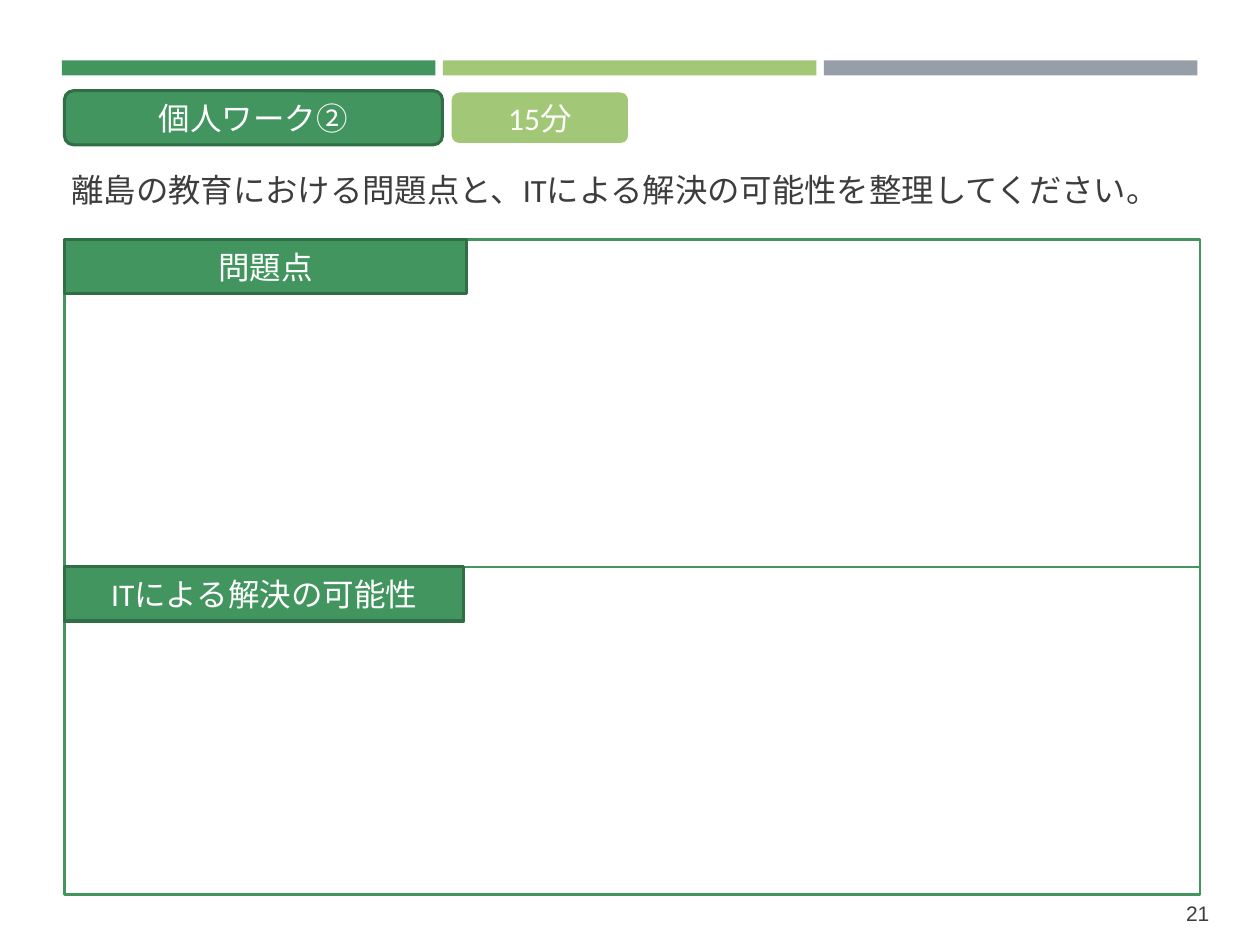
import dataclasses
import typing

import pptx
import pptx.dml.color
import pptx.enum.lang
import pptx.enum.shapes
import pptx.enum.text
import pptx.util

Cm = pptx.util.Cm
Pt = pptx.util.Pt
SHAPE = pptx.enum.shapes.MSO_SHAPE
ALIGN = pptx.enum.text.PP_ALIGN
ANCHOR = pptx.enum.text.MSO_ANCHOR

GREEN, LIME, GRAY = "42955F", "A2C777", "969FA7"
DARK_GREEN, WHITE, INK = "316E46", "FFFFFF", "3D3D3D"

MARGIN = 1.3
LABEL_HEIGHT = 1.09


@dataclasses.dataclass
class Panel:
    """All lengths are centimetres; line widths are points."""
    left: float
    top: float
    width: float
    height: float
    fill: typing.Optional[str] = None
    line: typing.Optional[str] = None
    line_width: float = 1.75
    kind: typing.Any = SHAPE.RECTANGLE
    text: str = ""


def color(value: str) -> pptx.dml.color.RGBColor:
    return pptx.dml.color.RGBColor.from_string(value)


def write(box, text: str, *, size: float = 18, ink: str = WHITE,
          font: str = "Calibri", align=ALIGN.CENTER, anchor=ANCHOR.MIDDLE,
          after: float = 0) -> None:
    frame = box.text_frame
    frame.word_wrap = True
    frame.vertical_anchor = anchor
    para = frame.paragraphs[0]
    para.alignment = align
    para.space_after = Pt(after)
    span = para.add_run()
    span.text = text
    span.font.size = Pt(size)
    span.font.name = font
    span.font.color.rgb = color(ink)
    span.font.language_id = pptx.enum.lang.MSO_LANGUAGE_ID.JAPANESE


def draw_panel(page, panel: Panel) -> None:
    box = page.shapes.add_shape(panel.kind, Cm(panel.left), Cm(panel.top),
                                Cm(panel.width), Cm(panel.height))
    box.shadow.inherit = False
    if panel.fill:
        box.fill.solid()
        box.fill.fore_color.rgb = color(panel.fill)
    else:
        box.fill.background()
    if panel.line:
        box.line.color.rgb = color(panel.line)
        box.line.width = Pt(panel.line_width)
    else:
        box.line.fill.background()
    if panel.text:
        write(box, panel.text)


def draw_text(page, left: float, top: float, width: float, height: float,
              text: str, **style) -> None:
    box = page.shapes.add_textbox(Cm(left), Cm(top), Cm(width), Cm(height))
    write(box, text, anchor=ANCHOR.TOP, **style)


def main() -> None:
    deck = pptx.Presentation()
    deck.slide_width, deck.slide_height = Cm(25.4), Cm(19.05)
    page = deck.slides.add_slide(deck.slide_layouts[6])

    # Three bars across the top
    for index, fill in enumerate((GREEN, LIME, GRAY)):
        draw_panel(page, Panel(1.25 + 7.68 * index, 1.22, 7.53, 0.3, fill))

    # Work title and time limit
    draw_panel(page, Panel(MARGIN, 1.83, 7.62, LABEL_HEIGHT, GREEN, DARK_GREEN,
                           kind=SHAPE.ROUNDED_RECTANGLE, text="個人ワーク②"))
    draw_panel(page, Panel(9.07, 1.83, 3.63, LABEL_HEIGHT, LIME, WHITE, 2,
                           kind=SHAPE.ROUNDED_RECTANGLE, text="15分"))

    # Instruction
    draw_text(page, 1.19, 3.3, 23.01, LABEL_HEIGHT,
              "離島の教育における問題点と、ITによる解決の可能性を整理してください。",
              size=18.5, ink=INK, align=ALIGN.LEFT, after=6)

    # Answer areas, then their labels on top
    first_top, area_height = 4.83, 6.6
    labels = (("問題点", 8.1), ("ITによる解決の可能性", 8.05))
    tops = [first_top + area_height * index for index in range(len(labels))]
    for top in tops:
        draw_panel(page, Panel(MARGIN, top, 22.89, area_height,
                               line=GREEN, line_width=1.5))
    for top, (text, width) in zip(tops, labels):
        draw_panel(page, Panel(MARGIN, top, width, LABEL_HEIGHT,
                               GREEN, DARK_GREEN, text=text))

    # Page number
    draw_text(page, 22.5, 18.03, 2.13, 1.02, "21",
              size=12, ink=INK, font="Arial", align=ALIGN.RIGHT)

    deck.save("out.pptx")


if __name__ == "__main__":
    main()
